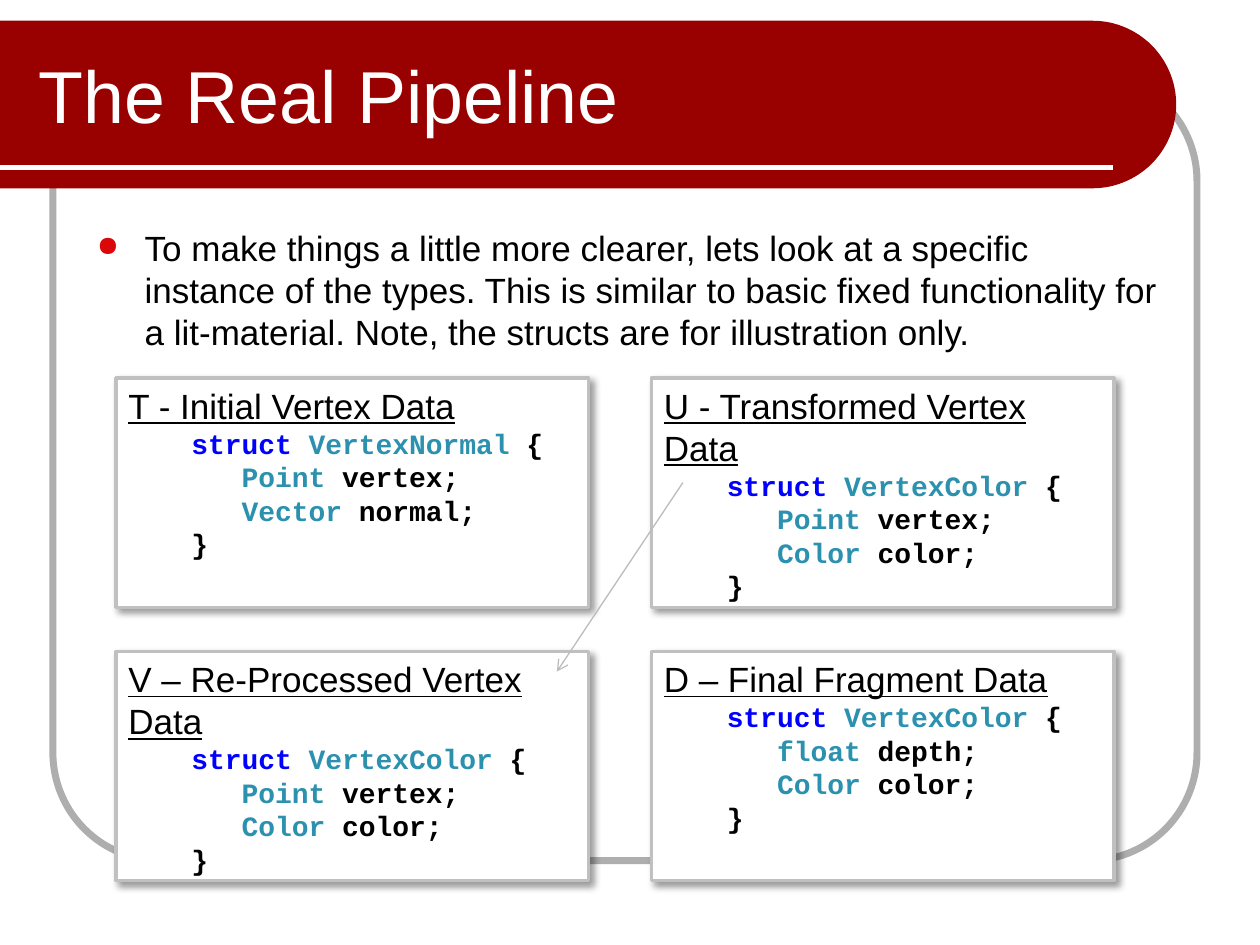
import math

from lxml import etree
from pptx import Presentation
from pptx import util as u
from pptx.dml.color import RGBColor
from pptx.enum import shapes, text
from pptx.oxml.ns import qn

Inches = u.Inches
BLACK = RGBColor(0x00, 0x00, 0x00)
WHITE = RGBColor(0xFF, 0xFF, 0xFF)
DARK_RED = RGBColor(0x99, 0x00, 0x00)
FRAME_GREY = RGBColor(0xAE, 0xAE, 0xAE)
BORDER_GREY = RGBColor(0xC0, 0xC0, 0xC0)
ARROW_GREY = RGBColor(0xBC, 0xBC, 0xBC)
KEYWORD_BLUE = RGBColor(0x00, 0x00, 0xFF)
TYPE_TEAL = RGBColor(0x2B, 0x91, 0xAF)


def write(para, words, size=20, font="Arial", color=BLACK, bold=None, underline=None):
    span = para.add_run()
    span.text = words
    span.font.size = u.Pt(size)
    span.font.name = font
    span.font.color.rgb = color
    span.font.bold = bold
    span.font.underline = underline


def add_line(start, end, color, width):
    line = slide.shapes.add_connector(
        shapes.MSO_CONNECTOR.STRAIGHT, *map(Inches, start + end))
    line.line.color.rgb = color
    line.line.width = u.Pt(width)
    etree.SubElement(line._element.spPr, qn("a:effectLst"))
    return line


deck = Presentation()
deck.slide_width, deck.slide_height = Inches(10), Inches(7.5)
page = slide = deck.slides.add_slide(deck.slide_layouts[6])

# Rounded grey frame
frame = page.shapes.add_shape(
    shapes.MSO_SHAPE.ROUNDED_RECTANGLE,
    Inches(0.42), Inches(0.58), Inches(9.08), Inches(6.25))
frame.adjustments[0] = 0.137
frame.shadow.inherit = False
frame.fill.background()
frame.line.color.rgb = FRAME_GREY
frame.line.width = u.Pt(4)

# Red title band with a semicircular right end
center_x, center_y, radius = 8.67, 0.83, 0.665
arc = [(Inches(center_x + radius * math.cos(math.radians(angle))),
        Inches(center_y + radius * math.sin(math.radians(angle))))
       for angle in range(-90, 91, 3)]
outline = page.shapes.build_freeform(0, arc[0][1])
outline.add_line_segments(arc + [(0, arc[-1][1])], close=True)
band = outline.convert_to_shape()
band.shadow.inherit = False
band.fill.solid()
band.fill.fore_color.rgb = DARK_RED
band.line.fill.background()
add_line((0, 1.33), (8.83, 1.33), WHITE, 3)

# Introductory bullet
body = page.shapes.add_textbox(Inches(0.67), Inches(1.75), Inches(8.67), Inches(4.83))
body.text_frame.word_wrap = True
para = body.text_frame.paragraphs[0]
properties = para._p.get_or_add_pPr()
properties.set("marL", str(Inches(0.38)))
properties.set("indent", str(-Inches(0.38)))
bullet_color = etree.SubElement(properties, qn("a:buClr"))
etree.SubElement(bullet_color, qn("a:srgbClr"), val="DA0808")
etree.SubElement(properties, qn("a:buSzPct"), val="80000")
etree.SubElement(properties, qn("a:buChar"), char="●")
write(para, "To make things a little more clearer, lets look at a specific instance "
            "of the types. This is similar to basic fixed functionality for a "
            "lit-material. Note, the structs are for illustration only.")

# Title
title = page.shapes.add_textbox(Inches(0.21), Inches(0.25), Inches(7.79), Inches(1))
title.text_frame.word_wrap = True
title.text_frame.vertical_anchor = text.MSO_ANCHOR.MIDDLE
write(title.text_frame.paragraphs[0], "The Real Pipeline", size=42, color=WHITE)

# Struct cards in a two by two grid: heading, struct name, (type, member) pairs
CARDS = [
    ("T - Initial Vertex Data", "VertexNormal",
     [("Point", "vertex"), ("Vector", "normal")]),
    ("U - Transformed Vertex Data", "VertexColor",
     [("Point", "vertex"), ("Color", "color")]),
    ("V – Re-Processed Vertex Data", "VertexColor",
     [("Point", "vertex"), ("Color", "color")]),
    ("D – Final Fragment Data", "VertexColor",
     [("float", "depth"), ("Color", "color")]),
]
COLUMNS = [(0.92, 3.75), (5.17, 3.67)]
for index, (heading, struct, members) in enumerate(CARDS):
    row, column = divmod(index, 2)
    left, width = COLUMNS[column]
    card = page.shapes.add_shape(
        shapes.MSO_SHAPE.RECTANGLE,
        Inches(left), Inches(3 + row * 2.17), Inches(width), Inches(1.82))
    card.fill.solid()
    card.fill.fore_color.rgb = WHITE
    card.line.color.rgb = BORDER_GREY
    card.line.width = u.Pt(2)

    # Soft shadow to the lower right
    card.shadow.inherit = False
    effects = card._element.spPr.find(qn("a:effectLst"))
    shadow = etree.SubElement(
        effects, qn("a:outerShdw"), blurRad=str(u.Pt(4)), dist=str(u.Pt(3)),
        dir="2700000", algn="tl", rotWithShape="0")
    shade = etree.SubElement(shadow, qn("a:srgbClr"), val="000000")
    etree.SubElement(shade, qn("a:alpha"), val="40000")

    # Heading and code
    frame_text = card.text_frame
    frame_text.word_wrap = True
    frame_text.vertical_anchor = text.MSO_ANCHOR.TOP
    para = frame_text.paragraphs[0]
    para.alignment = text.PP_ALIGN.LEFT
    write(para, heading, underline=True)
    code = [[("struct ", KEYWORD_BLUE), (struct, TYPE_TEAL), (" {", BLACK)]]
    code += [[("   ", BLACK), (kind, TYPE_TEAL), (f" {name};", BLACK)]
             for kind, name in members]
    code.append([("}", BLACK)])
    for code_line in code:
        para = frame_text.add_paragraph()
        para.alignment = text.PP_ALIGN.LEFT
        para.level = 1
        para._p.get_or_add_pPr().set("marL", str(Inches(0.5)))
        for words, color in code_line:
            write(para, words, size=16, font="Courier New", color=color, bold=True)

# Arrow from the transformed data to the re-processed data
arrow = add_line((5.42, 3.83), (4.42, 5.33), ARROW_GREY, 0.75)
etree.SubElement(arrow._element.spPr.find(qn("a:ln")), qn("a:tailEnd"), type="arrow")

deck.save("out.pptx")
